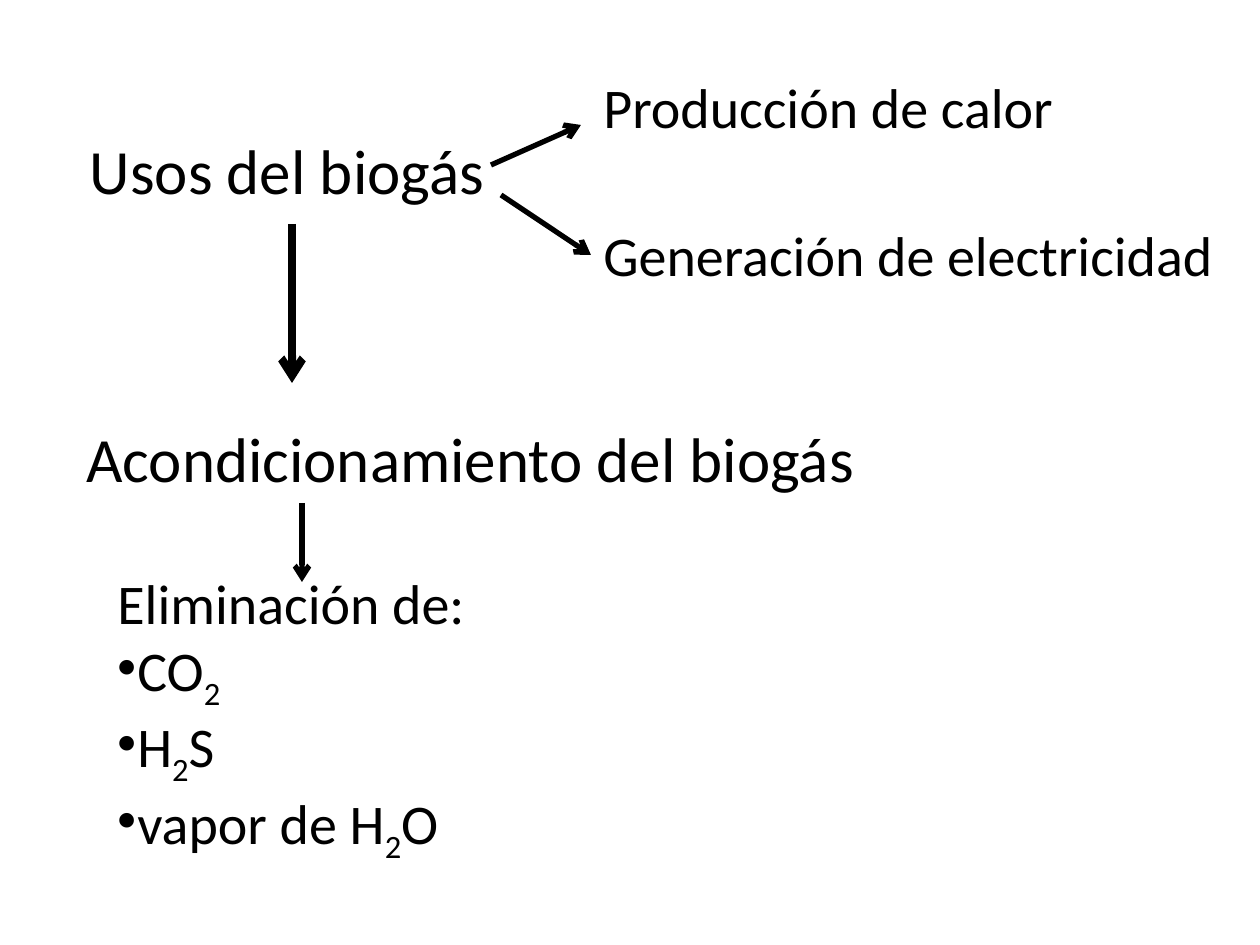
from typing import NamedTuple

from lxml import etree
from pptx import Presentation
from pptx import util as u
from pptx.dml.color import RGBColor
from pptx.enum import shapes, text
from pptx.oxml.ns import qn

PX = u.Inches(1) // 126
COLORS = {"ink": "000000", "paper": "FFFFFF"}
FONT = "Calibri"


class Run(NamedTuple):
    text: str
    sub: bool = False


class Label(NamedTuple):
    box: tuple[int, int, int, int]
    size: int
    text: str


class Arrow(NamedTuple):
    start: tuple[int, int]
    end: tuple[int, int]
    width: float = 3


HEADING = Label((64, 125, 446, 89), 36, "Usos del biogás")
LABELS = [
    Label((591, 66, 480, 81), 32, "Producción de calor"),
    Label((591, 214, 641, 81), 32, "Generación de electricidad"),
    Label((74, 413, 820, 127), 36, "Acondicionamiento del biogás"),
]
REMOVAL = Label((105, 562, 389, 323), 32, "Eliminación de:")
COMPOUNDS = [
    [Run("CO"), Run("2", True)],
    [Run("H"), Run("2", True), Run("S")],
    [Run("vapor de H"), Run("2", True), Run("O")],
]
ARROWS = [
    Arrow((491, 165), (581, 125)),
    Arrow((501, 195), (591, 255)),
    Arrow((292, 224), (292, 383), 4.5),
    Arrow((302, 503), (302, 582)),
]


def rgb(name: str) -> RGBColor:
    return RGBColor.from_string(COLORS[name])


def add_run(p, run: Run, size: int) -> None:
    r = p.add_run()
    r.text = run.text
    r.font.name = FONT
    r.font.size = u.Pt(size)
    r.font.color.rgb = rgb("ink")
    if run.sub:
        r.font._element.set("baseline", "-25000")


def set_bullet(p, char: str | None) -> None:
    pPr = p._p.get_or_add_pPr()
    pPr.set("marL", "0")
    pPr.set("indent", "0")
    if char:
        etree.SubElement(pPr, qn("a:buChar")).set("char", char)
    else:
        etree.SubElement(pPr, qn("a:buNone"))


def add_label(s, label: Label):
    sp = s.shapes.add_textbox(*(v * PX for v in label.box))
    tf = sp.text_frame
    tf.word_wrap = False
    tf.auto_size = text.MSO_AUTO_SIZE.SHAPE_TO_FIT_TEXT
    add_run(tf.paragraphs[0], Run(label.text), label.size)
    return tf


def fill_heading(s, label: Label) -> None:
    sp = s.placeholders[1]
    sp.left, sp.top, sp.width, sp.height = (v * PX for v in label.box)
    tf = sp.text_frame
    tf.word_wrap = True
    tf.auto_size = text.MSO_AUTO_SIZE.NONE
    tf.vertical_anchor = text.MSO_ANCHOR.TOP
    p = tf.paragraphs[0]
    p.alignment = text.PP_ALIGN.CENTER
    p.space_before = u.Pt(0)
    set_bullet(p, None)
    add_run(p, Run(label.text), label.size)


def add_removal_list(s) -> None:
    tf = add_label(s, REMOVAL)
    for runs in COMPOUNDS:
        p = tf.add_paragraph()
        set_bullet(p, "•")
        for run in runs:
            add_run(p, run, REMOVAL.size)


def add_arrow(s, arrow: Arrow) -> None:
    ends = (v * PX for v in arrow.start + arrow.end)
    c = s.shapes.add_connector(shapes.MSO_CONNECTOR.STRAIGHT, *ends)
    c.line.color.rgb = rgb("ink")
    c.line.width = u.Pt(arrow.width)
    etree.SubElement(c.line._get_or_add_ln(), qn("a:tailEnd")).set("type", "arrow")
    etree.SubElement(c._element.spPr, qn("a:effectLst"))


def main() -> None:
    prs = Presentation()
    prs.slide_width, prs.slide_height = u.Inches(10), u.Inches(7.5)
    s = prs.slides.add_slide(prs.slide_layouts[1])
    s.background.fill.solid()
    s.background.fill.fore_color.rgb = rgb("paper")
    title = s.shapes.title._element
    title.getparent().remove(title)
    fill_heading(s, HEADING)
    for label in LABELS:
        add_label(s, label)
    add_removal_list(s)
    for arrow in ARROWS:
        add_arrow(s, arrow)
    prs.save("out.pptx")


if __name__ == "__main__":
    main()
